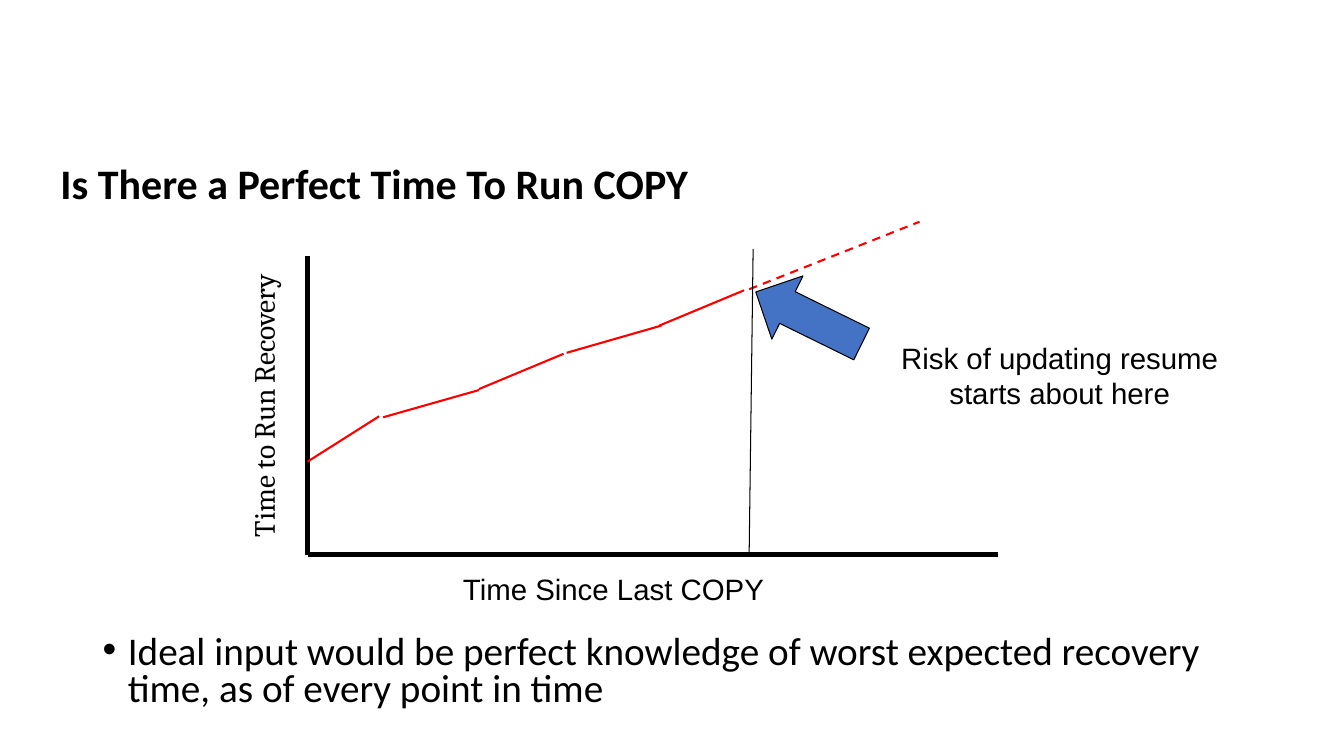
"""Build the slide on the perfect time to run COPY."""
from lxml import etree
from pptx import Presentation
from pptx.dml.color import RGBColor
from pptx.enum.dml import MSO_LINE
from pptx.enum.shapes import MSO_CONNECTOR, MSO_SHAPE
from pptx.enum.text import MSO_ANCHOR, PP_ALIGN
from pptx.oxml.ns import qn
from pptx.util import Inches, Pt

STRAIGHT = MSO_CONNECTOR.STRAIGHT
DOWN_ARROW = MSO_SHAPE.DOWN_ARROW
DASH = MSO_LINE.DASH
MIDDLE, TOP = MSO_ANCHOR.MIDDLE, MSO_ANCHOR.TOP
LEFT, CENTER = PP_ALIGN.LEFT, PP_ALIGN.CENTER
BLACK, RED, BLUE = "000000", "FF0000", "4472C4"


def color(value):
    """Turn a hex string into a colour."""
    return RGBColor.from_string(value)


def write(shape, box, text, anchor, paragraph_format, font_format):
    """Place a shape and fill it with one formatted paragraph."""
    shape.left, shape.top, shape.width, shape.height = map(Inches, box)
    frame = shape.text_frame
    frame.word_wrap = True
    frame.vertical_anchor = anchor
    paragraph = frame.paragraphs[0]
    paragraph.text = text
    for name, value in paragraph_format.items():
        setattr(paragraph, name, value)
    for name, value in font_format.items():
        setattr(paragraph.runs[0].font, name, value)
    paragraph.runs[0].font.color.rgb = color(BLACK)
    return paragraph


presentation = Presentation()
presentation.slide_width = Inches(13.33)
presentation.slide_height = Inches(7.5)
slide = presentation.slides.add_slide(presentation.slide_layouts[5])
shapes = slide.shapes

write(shapes.title, (0.5, 1.41, 10.72, 0.87), "Is There a Perfect Time To Run COPY", MIDDLE,
      {"alignment": LEFT, "line_spacing": 0.9},
      {"name": "Calibri", "size": Pt(30), "bold": True})

bullet = write(shapes.add_textbox(0, 0, 0, 0), (0.92, 6.25, 11.5, 0.87),
               "Ideal input would be perfect knowledge of worst expected recovery time, "
               "as of every point in time", TOP,
               {"alignment": LEFT, "line_spacing": 0.8},
               {"name": "Calibri", "size": Pt(28)})
properties = bullet._p.get_or_add_pPr()
properties.set("marL", str(Inches(0.25)))
properties.set("indent", str(Inches(-0.25)))
etree.SubElement(properties, qn("a:buFont")).set("typeface", "Arial")
etree.SubElement(properties, qn("a:buChar")).set("char", "•")

labels = [
    ("Time Since Last COPY", (4.23, 5.62, 3.71, 0.47), 0, "Arial"),
    ("Time to Run Recovery", (1.07, 3.79, 3.1, 0.47), 270, "Cambria"),
    ("Risk of updating resume starts about here", (8.65, 3.32, 3.72, 0.82), 0, "Arial"),
]
for text, box, rotation, font_name in labels:
    label = shapes.add_textbox(0, 0, 0, 0)
    label.rotation = rotation
    write(label, box, text, TOP, {"alignment": CENTER}, {"name": font_name, "size": Pt(21)})

axes = [(3.05, 2.54, 3.05, 5.51), (9.9, 5.5, 3.05, 5.5)]
recovery_curve = [
    (3.05, 4.58, 3.76, 4.13),
    (3.8, 4.14, 4.75, 3.87),
    (4.75, 3.86, 5.59, 3.51),
    (5.62, 3.5, 6.56, 3.23),
    (6.54, 3.23, 7.38, 2.88),
]
projection = [(7.43, 2.87, 9.12, 2.2)]
risk_limit = [(7.43, 5.51, 7.47, 2.47)]
line_groups = [
    (axes, BLACK, 3, None),
    (recovery_curve, RED, 1.5, None),
    (projection, RED, 1.5, DASH),
    (risk_limit, BLACK, 0.75, None),
]
for segments, line_color, width, dash in line_groups:
    for segment in segments:
        connector = shapes.add_connector(STRAIGHT, *map(Inches, segment))
        connector.line.color.rgb = color(line_color)
        connector.line.width = Pt(width)
        connector.line.dash_style = dash
        etree.SubElement(connector._element.spPr, qn("a:effectLst"))

arrow = shapes.add_shape(DOWN_ARROW, *map(Inches, (7.67, 2.57, 0.7, 1.17)))
arrow.rotation = 116.2
arrow.shadow.inherit = False
arrow.fill.solid()
arrow.fill.fore_color.rgb = color(BLUE)
arrow.line.color.rgb = color(BLACK)
arrow.line.width = Pt(0.75)

presentation.save("out.pptx")
